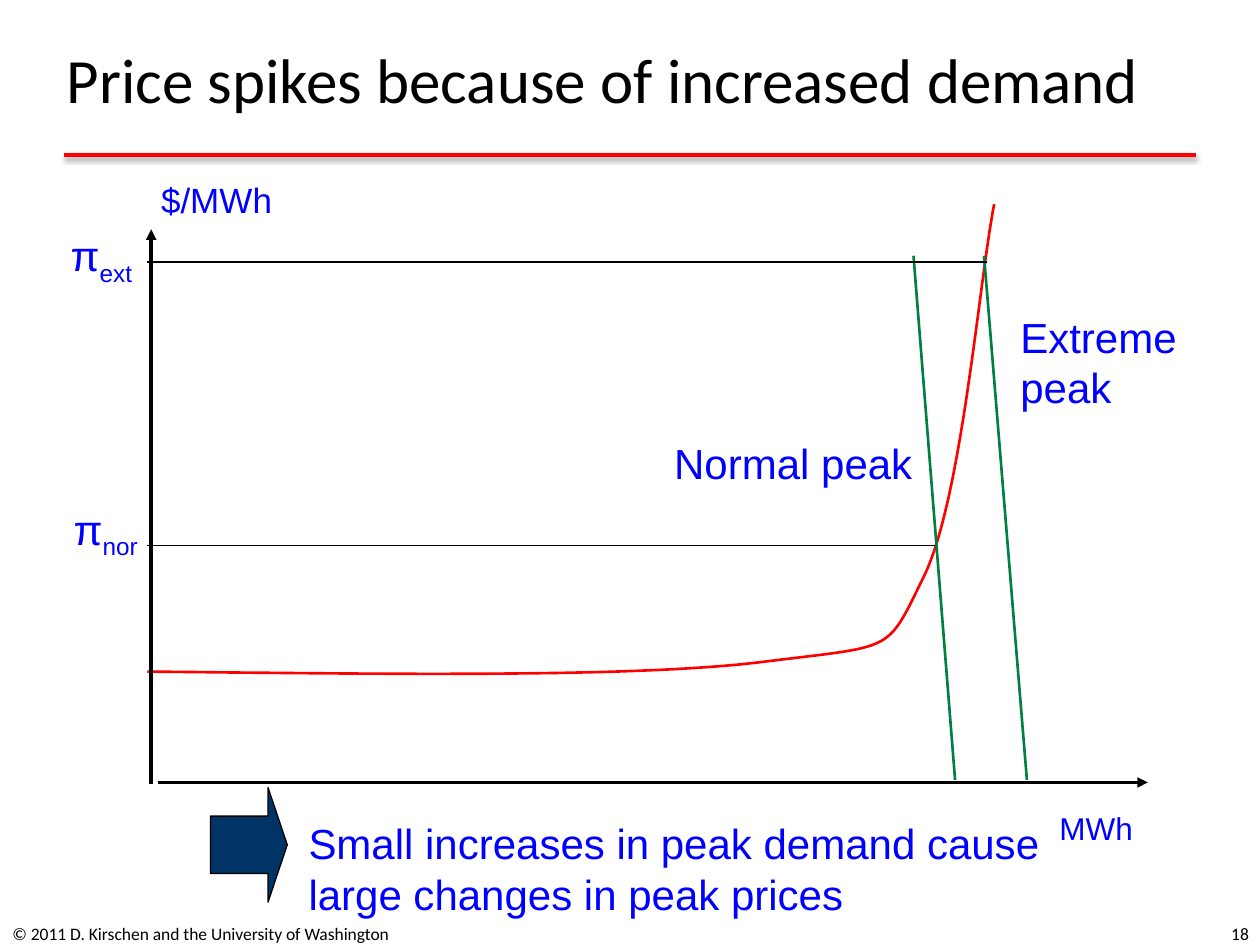
"""Build a slide showing how increased demand causes electricity price spikes."""
from dataclasses import dataclass

import lxml.etree
import pptx
import pptx.dml.color
import pptx.enum.shapes
import pptx.enum.text
import pptx.oxml.ns
import pptx.util

Inches = pptx.util.Inches
Pt = pptx.util.Pt
qn = pptx.oxml.ns.qn
ALIGN = pptx.enum.text.PP_ALIGN
ANCHOR = pptx.enum.text.MSO_ANCHOR

COLORS = {
    "black": "000000",
    "red": "FF0000",
    "blue": "0000FF",
    "green": "008040",
    "navy": "003366",
}

Point = tuple[float, float]


@dataclass
class Line:
    start: Point
    end: Point
    color: str = "black"
    width: float = 0.75
    arrow: bool = False
    shadow: bool = False


@dataclass
class Label:
    text: str
    box: tuple[float, float, float, float]
    size: int = 24
    font: str = "Arial"
    color: str = "blue"
    align: ALIGN = ALIGN.LEFT
    anchor: ANCHOR = ANCHOR.MIDDLE
    wrap: bool = False
    grow: bool = True
    subscript: str = ""


AXIS_X = 1.17
LINES = [
    Line((0.51, 1.23), (9.49, 1.23), "red", 2, shadow=True),
    Line((1.25, 6.21), (9.11, 6.21), width=2, arrow=True),
    Line((1.2, 6.22), (1.2, 1.82), width=2, arrow=True),
    Line((7.58, 6.19), (7.25, 2.03), "green", 1.5),
    Line((8.15, 6.19), (7.81, 2.03), "green", 1.5),
    Line((7.42, 4.33), (AXIS_X, 4.33)),
    Line((7.83, 2.08), (AXIS_X, 2.08)),
]

FOOTER = dict(size=10, font="Calibri", color="black", wrap=True, grow=False)
LABELS = [
    Label("Price spikes because of increased demand", (0.43, 0.25, 9.35, 0.75),
          36, "Calibri", "black", wrap=True, grow=False),
    Label("© 2011 D. Kirschen and the University of Washington",
          (0, 7.21, 4.29, 0.4), **FOOTER),
    Label("18", (7.68, 7.21, 2.33, 0.4), align=ALIGN.RIGHT, **FOOTER),
    Label("$/MWh", (1.18, 1.37, 1.08, 0.43), 20, anchor=ANCHOR.TOP, wrap=True),
    Label("MWh", (8.31, 6.37, 0.78, 0.4), 18, anchor=ANCHOR.TOP),
    Label("Normal peak", (5.25, 3.42, 2.09, 0.5), align=ALIGN.CENTER),
    Label("Small increases in peak demand cause\nlarge changes in peak prices",
          (2.35, 6.44, 6.09, 0.9)),
    Label("Extreme\npeak", (8, 2.42, 1.53, 0.9)),
    Label("π", (0.44, 1.8, 0.73, 0.5), align=ALIGN.CENTER, subscript="ext"),
    Label("π", (0.46, 3.97, 0.76, 0.5), align=ALIGN.CENTER, subscript="nor"),
]

SUPPLY_START = (AXIS_X, 5.33)
SUPPLY_BEZIERS = [
    ((3.11, 5.35), (5.06, 5.38), (6.08, 5.25)),
    ((7.11, 5.12), (7.03, 5.19), (7.33, 4.58)),
    ((7.63, 3.98), (7.77, 2.24), (7.89, 1.62)),
]
STEPS = 30


def rgb(name: str) -> pptx.dml.color.RGBColor:
    """Return the named colour."""
    return pptx.dml.color.RGBColor.from_string(COLORS[name])


def add_line(slide: pptx.slide.Slide, line: Line) -> None:
    """Draw a straight line with an optional arrowhead and shadow."""
    connector = slide.shapes.add_connector(
        pptx.enum.shapes.MSO_CONNECTOR.STRAIGHT,
        *map(Inches, line.start + line.end))
    connector.line.color.rgb = rgb(line.color)
    connector.line.width = Pt(line.width)
    if line.arrow:
        lxml.etree.SubElement(connector.line._get_or_add_ln(), qn("a:tailEnd"),
                              type="triangle")
    effects = lxml.etree.SubElement(connector._element.spPr, qn("a:effectLst"))
    if line.shadow:
        shadow = lxml.etree.SubElement(
            effects, qn("a:outerShdw"), blurRad=str(Pt(3.1)),
            dist=str(Pt(1.6)), dir="5400000", rotWithShape="0")
        tint = lxml.etree.SubElement(shadow, qn("a:srgbClr"), val=COLORS["black"])
        lxml.etree.SubElement(tint, qn("a:alpha"), val="38000")


def add_label(slide: pptx.slide.Slide, label: Label) -> None:
    """Write a text label with an optional subscript."""
    frame = slide.shapes.add_textbox(*map(Inches, label.box)).text_frame
    frame.text = label.text
    frame.word_wrap = label.wrap
    frame.vertical_anchor = label.anchor
    if label.grow:
        frame.auto_size = pptx.enum.text.MSO_AUTO_SIZE.SHAPE_TO_FIT_TEXT
    if label.subscript:
        subscript = frame.paragraphs[0].add_run()
        subscript.text = label.subscript
        subscript.font._element.set("baseline", "-25000")
    for paragraph in frame.paragraphs:
        paragraph.alignment = label.align
        for run in paragraph.runs:
            run.font.size = Pt(label.size)
            run.font.name = label.font
            run.font.color.rgb = rgb(label.color)


def bezier(points: tuple[Point, ...], t: float) -> Point:
    """Return the point at t on a cubic curve."""
    weights = ((1 - t) ** 3, 3 * t * (1 - t) ** 2, 3 * t * t * (1 - t), t ** 3)
    return (sum(w * x for w, (x, _) in zip(weights, points)),
            sum(w * y for w, (_, y) in zip(weights, points)))


def add_supply_curve(slide: pptx.slide.Slide) -> None:
    """Draw the supply curve."""
    vertices = [SUPPLY_START]
    for controls in SUPPLY_BEZIERS:
        segment = (vertices[-1], *controls)
        vertices += [bezier(segment, i / STEPS) for i in range(1, STEPS + 1)]
    vertices = [(Inches(x), Inches(y)) for x, y in vertices]
    builder = slide.shapes.build_freeform(*vertices[0])
    builder.add_line_segments(vertices[1:], close=False)
    supply = builder.convert_to_shape()
    supply.shadow.inherit = False
    supply.fill.background()
    supply.line.color.rgb = rgb("red")
    supply.line.width = Pt(1.5)


def add_conclusion_arrow(slide: pptx.slide.Slide) -> None:
    """Draw the block arrow beside the conclusion."""
    arrow = slide.shapes.add_shape(
        pptx.enum.shapes.MSO_SHAPE.RIGHT_ARROW,
        *map(Inches, (1.67, 6.25, 0.61, 0.91)))
    arrow.adjustments[0] = 0.5
    arrow.adjustments[1] = 0.25
    arrow.shadow.inherit = False
    arrow.fill.solid()
    arrow.fill.fore_color.rgb = rgb("navy")
    arrow.line.color.rgb = rgb("black")
    arrow.line.width = Pt(0.75)


def main() -> None:
    """Build and save the slide."""
    presentation = pptx.Presentation()
    presentation.slide_width = Inches(10)
    presentation.slide_height = Inches(7.5)
    slide = presentation.slides.add_slide(presentation.slide_layouts[6])
    add_supply_curve(slide)
    for line in LINES:
        add_line(slide, line)
    add_conclusion_arrow(slide)
    for label in LABELS:
        add_label(slide, label)
    presentation.save("out.pptx")


if __name__ == "__main__":
    main()
